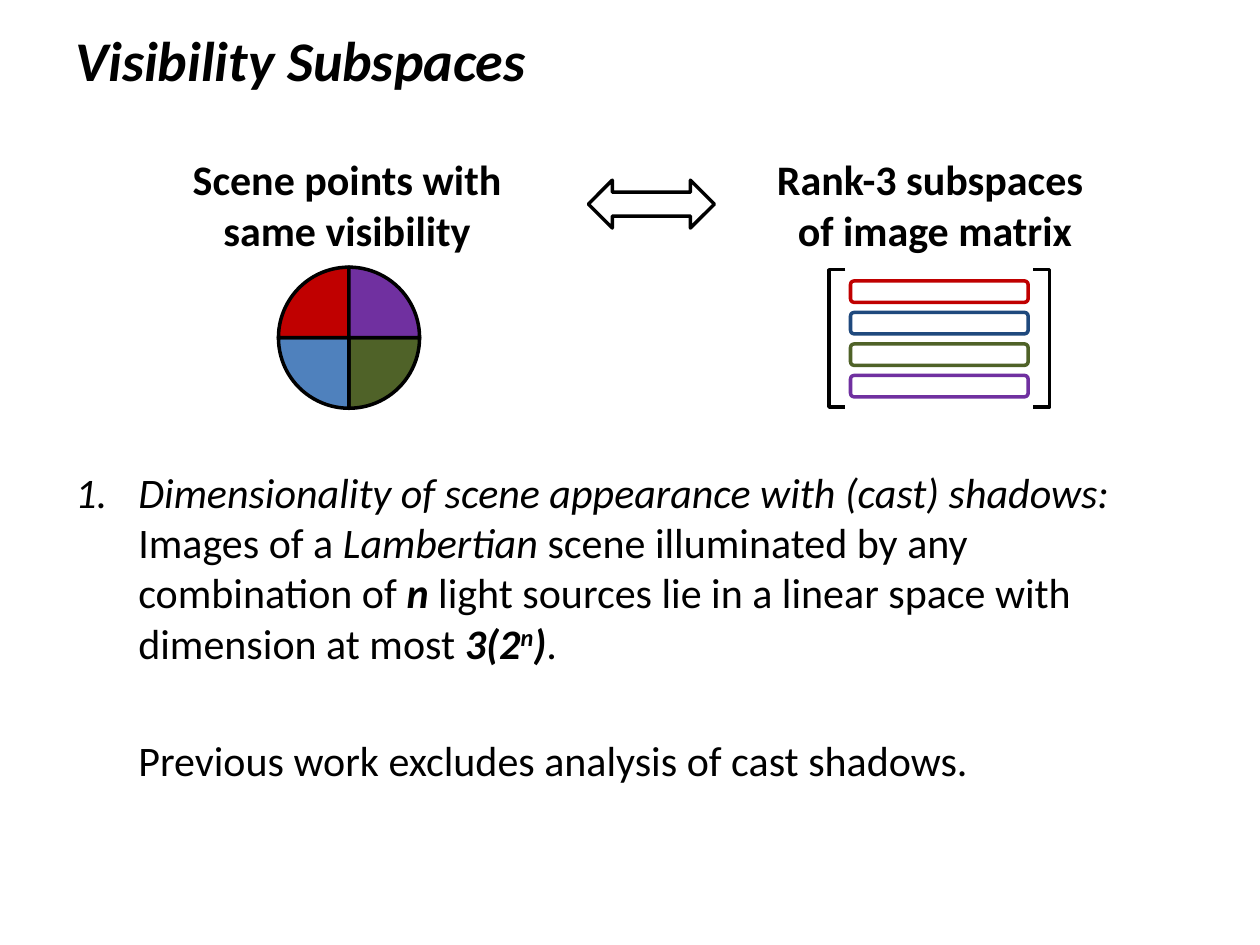
from lxml import etree
from pptx import Presentation
from pptx import util as u
from pptx.dml.color import RGBColor
from pptx.enum import shapes, text
from pptx.oxml.ns import qn

COLORS = {
    "black": "000000",
    "red": "C00000",
    "purple": "7030A0",
    "green": "4F6228",
    "blue": "4F81BD",
    "navy": "1F497D",
}
BOLD = {"bold": True}
ITALIC = {"italic": True}
BOLD_ITALIC = {"bold": True, "italic": True}
SUPERSCRIPT = {"bold": True, "italic": True, "baseline": "30000"}


class SlideBuilder:
    font_name = "Calibri"
    body_size = u.Pt(24)
    line_width = u.Pt(2)

    def __init__(self, slide):
        self.slide = slide

    def color(self, name):
        return RGBColor.from_string(COLORS[name])

    def text_box(self, box, paragraphs, size=None, align=text.PP_ALIGN.LEFT,
                 anchor=text.MSO_ANCHOR.TOP):
        frame = self.slide.shapes.add_textbox(*map(u.Inches, box)).text_frame
        frame.word_wrap = True
        frame.vertical_anchor = anchor
        for index, runs in enumerate(paragraphs):
            paragraph = frame.add_paragraph() if index else frame.paragraphs[0]
            paragraph.alignment = align
            for words, style in runs:
                self.run(paragraph, words, style, size or self.body_size)
        return frame.paragraphs

    def run(self, paragraph, words, style, size):
        run = paragraph.add_run()
        run.text = words
        values = {"name": self.font_name, "size": size, "bold": False, "italic": False, **style}
        baseline = values.pop("baseline", None)
        for key, value in values.items():
            setattr(run.font, key, value)
        run.font.color.rgb = self.color("black")
        if baseline:
            run._r.get_or_add_rPr().set("baseline", baseline)

    def indent(self, paragraph, left, first=0.0, numbered=False):
        properties = paragraph._p.get_or_add_pPr()
        properties.set("marL", str(u.Inches(left)))
        properties.set("indent", str(u.Inches(first)))
        if numbered:
            etree.SubElement(properties, qn("a:buAutoNum")).set("type", "arabicPeriod")

    def outline(self, shape, line, fill=None):
        shape.shadow.inherit = False
        shape.line.color.rgb = self.color(line)
        shape.line.width = self.line_width
        if fill:
            shape.fill.solid()
            shape.fill.fore_color.rgb = self.color(fill)
        else:
            shape.fill.background()

    def shape(self, kind, box, line="black", fill=None, rotation=0, adjustments=()):
        shape = self.slide.shapes.add_shape(kind, *map(u.Inches, box))
        shape.rotation = rotation
        for index, value in enumerate(adjustments):
            shape.adjustments[index] = value
        self.outline(shape, line, fill)

    def bracket(self, spine, tip, top, bottom):
        corners = [(tip, top), (spine, top), (spine, bottom), (tip, bottom)]
        start, *rest = [(u.Inches(x), u.Inches(y)) for x, y in corners]
        builder = self.slide.shapes.build_freeform(*start)
        builder.add_line_segments(rest, close=False)
        self.outline(builder.convert_to_shape(), "black")


def main():
    deck = Presentation()
    deck.slide_width, deck.slide_height = u.Inches(10), u.Inches(7.5)
    builder = SlideBuilder(deck.slides.add_slide(deck.slide_layouts[6]))

    builder.text_box((0.5, 0.08, 9, 0.78), [[("Visibility Subspaces", BOLD_ITALIC)]],
                     size=u.Pt(32), anchor=text.MSO_ANCHOR.MIDDLE)

    theorem, previous_work = builder.text_box((0.5, 3.65, 9, 3.35), [
        [
            ("Dimensionality of scene appearance with (cast) shadows: ", ITALIC),
            ("Images of a ", {}),
            ("Lambertian", ITALIC),
            (" scene illuminated by any combination of ", {}),
            ("n ", BOLD_ITALIC),
            ("light sources lie in a linear space with dimension at most ", {}),
            ("3(2", BOLD_ITALIC),
            ("n", SUPERSCRIPT),
            (")", BOLD_ITALIC),
            (".", {}),
        ],
        [("Previous work excludes analysis of cast shadows.", {})],
    ])
    builder.indent(theorem, 0.5, -0.5, numbered=True)
    builder.indent(previous_work, 0.5)
    previous_work.space_before = u.Pt(38)

    center = text.PP_ALIGN.CENTER
    builder.text_box((1.17, 1.17, 3.17, 0.91),
                     [[("Scene points with same visibility", BOLD)]], align=center)
    builder.text_box((6.01, 1.17, 2.82, 0.91),
                     [[("Rank-3 subspaces ", BOLD)], [("of image matrix", BOLD)]], align=center)
    builder.shape(shapes.MSO_SHAPE.UP_DOWN_ARROW, (4.98, 1.12, 0.38, 1), rotation=270)

    quarter = 54
    for index, sector in enumerate(("green", "blue", "red", "purple")):
        start, end = quarter * index, quarter * (index + 1) % (4 * quarter)
        builder.shape(shapes.MSO_SHAPE.PIE, (2.21, 2.12, 1.12, 1.12),
                      fill=sector, adjustments=(start, end))

    for spine, tip in ((6.58, 6.71), (8.33, 8.2)):
        builder.bracket(spine, tip, 2.14, 3.23)
    for index, row in enumerate(("red", "navy", "green", "purple")):
        builder.shape(shapes.MSO_SHAPE.ROUNDED_RECTANGLE,
                      (6.75, 2.23 + 0.25 * index, 1.41, 0.17), line=row)

    deck.save("out.pptx")


if __name__ == "__main__":
    main()
